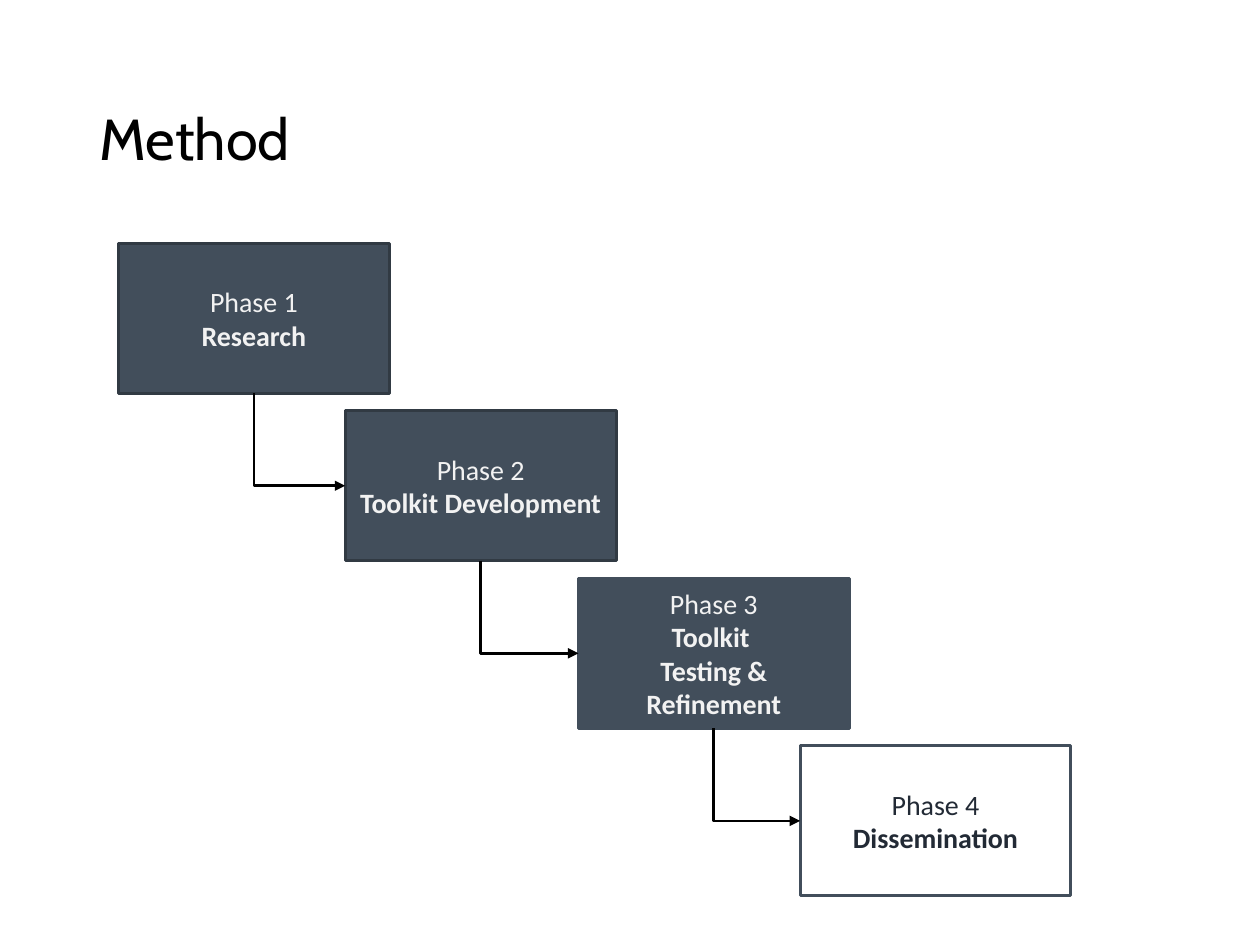
from dataclasses import dataclass
from lxml.etree import SubElement
from pptx import Presentation
from pptx.dml.color import RGBColor
from pptx.enum.shapes import MSO_CONNECTOR as Link, MSO_SHAPE as Shape
from pptx.enum.text import MSO_ANCHOR as Anchor, PP_ALIGN as Align
from pptx.oxml.ns import qn
from pptx.util import Inches, Pt


@dataclass(frozen=True)
class Theme:
    ink: str = "000000"
    slate: str = "424E5B"
    edge: str = "313A43"
    white: str = "FFFFFF"
    pale: str = "F2F2F2"
    navy: str = "222A35"
    head: str = "Cabin"
    body: str = "Calibri"
    big: int = 33
    small: int = 16
    rim: float = 1.75
    wire: float = 1.5


THEME = Theme()
WIDE, HIGH = 2.15, 1.19
TOP, STEP = 1.93, 1.33
PHASES = [
    (0.94, ["Research"], THEME.slate, THEME.edge, THEME.pale),
    (2.74, ["Toolkit Development"], THEME.slate, THEME.edge, THEME.pale),
    (4.59, ["Toolkit ", "Testing & Refinement"], THEME.slate, THEME.slate, THEME.pale),
    (6.35, ["Dissemination"], THEME.white, THEME.slate, THEME.navy),
]


def rgb(code):
    return RGBColor.from_string(code)


def write(para, text, font, size, color, bold=False, align=Align.LEFT, space=None):
    para.alignment = align
    para.line_spacing = space
    run = para.add_run()
    run.text = text
    run.font.name = font
    run.font.size = Pt(size)
    run.font.bold = bold
    run.font.color.rgb = rgb(color)


def add_title(slide, box, text):
    title = slide.shapes.title
    title.left, title.top, title.width, title.height = map(Inches, box)
    frame = title.text_frame
    frame.vertical_anchor = Anchor.MIDDLE
    write(frame.paragraphs[0], text, THEME.head, THEME.big, THEME.ink, space=0.9)


def add_phase(group, box, lines, fill, edge, color):
    card = group.shapes.add_shape(Shape.RECTANGLE, *map(Inches, box))
    card.shadow.inherit = False
    card.fill.solid()
    card.fill.fore_color.rgb = rgb(fill)
    card.line.color.rgb = rgb(edge)
    card.line.width = Pt(THEME.rim)
    frame = card.text_frame
    frame.word_wrap = True
    frame.vertical_anchor = Anchor.MIDDLE
    for row, text in enumerate(lines):
        para = frame.add_paragraph() if row else frame.paragraphs[0]
        write(para, text, THEME.body, THEME.small, color, bold=row > 0, align=Align.CENTER)
    return card


def add_arrow(group, start, end):
    x, y = start.left + start.width // 2, start.top + start.height
    across, down = end.left - x, end.top + end.height // 2 - y
    arrow = group.shapes.add_connector(Link.ELBOW, x, y, x + across, y + down)
    arrow.begin_connect(start, 2)
    arrow.end_connect(end, 1)
    # The elbow runs right then down, so a flipped quarter turn makes it drop first.
    arrow.left, arrow.top = x + (across - down) // 2, y + (down - across) // 2
    arrow.width, arrow.height = down, across
    arrow.line.color.rgb = rgb(THEME.ink)
    arrow.line.width = Pt(THEME.wire)
    props = arrow._element.spPr
    frame = props.find(qn("a:xfrm"))
    frame.set("rot", str(270 * 60000))
    frame.set("flipH", "1")
    props.find(qn("a:prstGeom")).set("prst", "bentConnector2")
    SubElement(props.find(qn("a:ln")), qn("a:tailEnd"), type="triangle")
    SubElement(props, qn("a:effectLst"))


def add_steps(slide, top):
    group = slide.shapes.add_group_shape()
    cards = []
    for i, (left, names, fill, edge, color) in enumerate(PHASES):
        box = (left, top + i * STEP, WIDE, HIGH)
        cards.append(add_phase(group, box, [f"Phase {i + 1}", *names], fill, edge, color))
    for start, end in zip(cards, cards[1:]):
        add_arrow(group, start, end)


def main():
    deck = Presentation()
    deck.slide_width, deck.slide_height = Inches(10), Inches(7.5)
    slide = deck.slides.add_slide(deck.slide_layouts[5])
    add_title(slide, (0.69, 0.4, 8.62, 1.45), "Method")
    add_steps(slide, TOP)
    deck.save("out.pptx")


if __name__ == "__main__":
    main()
